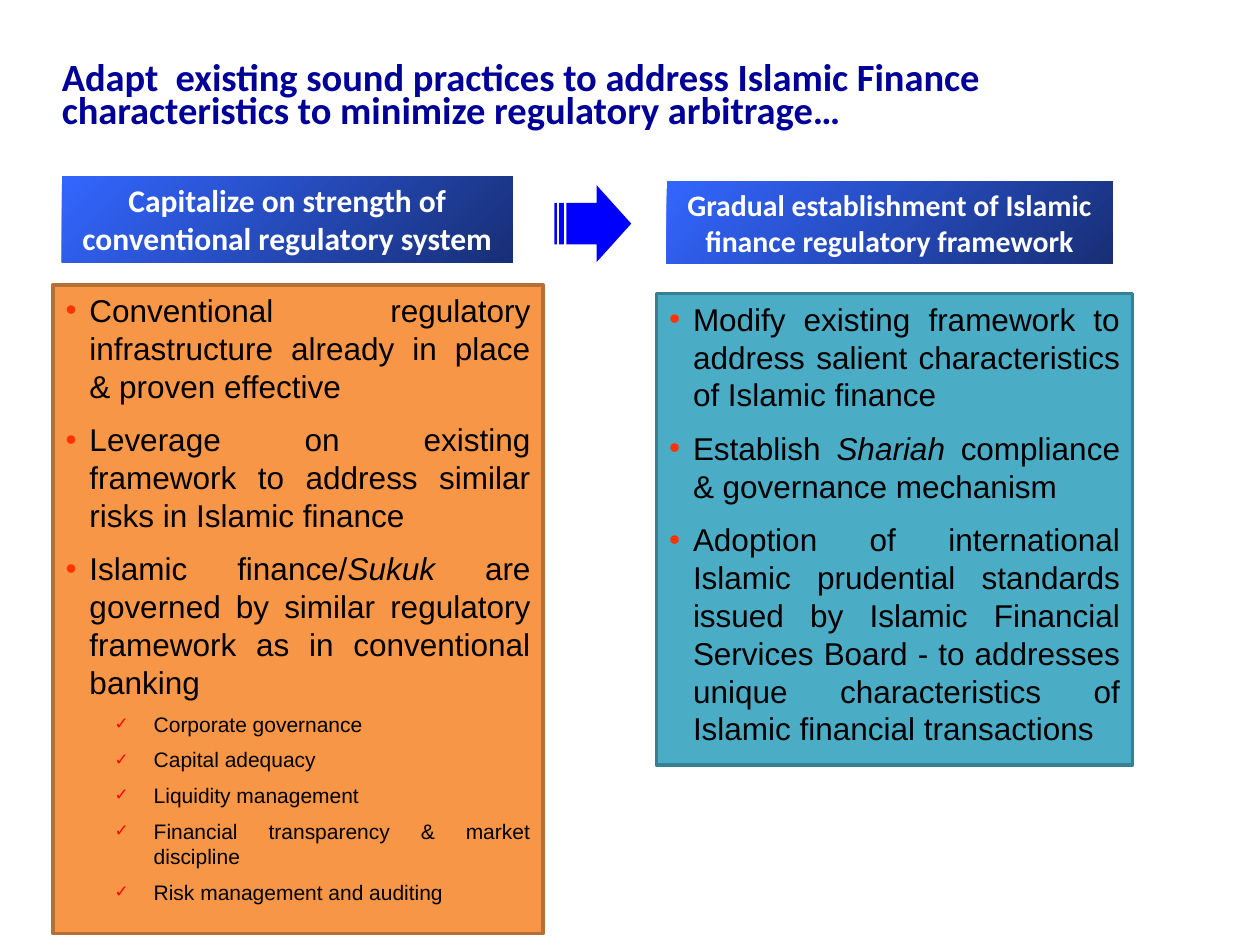
import dataclasses

import lxml.etree
import pptx
import pptx.dml.color
import pptx.enum.shapes
import pptx.enum.text
import pptx.oxml.ns
import pptx.util

Inches = pptx.util.Inches
Pt = pptx.util.Pt
SHAPE = pptx.enum.shapes.MSO_SHAPE
ALIGN = pptx.enum.text.PP_ALIGN
ANCHOR = pptx.enum.text.MSO_ANCHOR


@dataclasses.dataclass(frozen=True)
class Theme:
    heading_font: str = "Calibri"
    body_font: str = "Arial"
    title: str = "000099"
    text: str = "000000"
    header_text: str = "FFFFFF"
    header_start: str = "3366FF"
    header_end: str = "182F76"
    arrow: str = "0000FF"
    orange: str = "F79646"
    orange_line: str = "B76F34"
    teal: str = "4BACC6"
    teal_line: str = "377F92"
    bullet: str = "FF3300"
    check: str = "FF0000"
    title_size: int = 22
    body_size: int = 18
    sub_size: int = 12


def rgb(value):
    return pptx.dml.color.RGBColor.from_string(value)


def write(p, text, *, font, size, color, bold=False, align=ALIGN.JUSTIFY):
    """Add text to a paragraph; parts between asterisks are italic."""
    p.alignment = align
    for i, part in enumerate(text.split("*")):
        if part:
            r = p.add_run()
            r.text = part
            r.font.name = font
            r.font.size = Pt(size)
            r.font.color.rgb = rgb(color)
            r.font.bold = bold
            r.font.italic = i % 2 == 1


def set_bullet(p, char, color, left, hanging, percent):
    pPr = p._p.get_or_add_pPr()
    pPr.set("marL", str(Inches(left)))
    pPr.set("indent", str(-Inches(hanging)))

    def add(parent, tag, **attrs):
        return lxml.etree.SubElement(parent, pptx.oxml.ns.qn(tag), attrs)

    add(add(pPr, "a:buClr"), "a:srgbClr", val=color)
    add(pPr, "a:buSzPct", val=str(percent * 1000))
    add(pPr, "a:buChar", char=char)


def place(sp, left, top, width, height):
    sp.left, sp.top = Inches(left), Inches(top)
    sp.width, sp.height = Inches(width), Inches(height)


class SlideBuilder:
    def __init__(self, slide, theme):
        self.slide = slide
        self.theme = theme

    def paragraphs(self, tf, count):
        return [tf.paragraphs[0]] + [tf.add_paragraph() for _ in range(count - 1)]

    def frame(self, sp, anchor):
        tf = sp.text_frame
        tf.word_wrap = True
        tf.auto_size = pptx.enum.text.MSO_AUTO_SIZE.NONE
        tf.vertical_anchor = anchor
        return tf

    def title(self, lines, box):
        t = self.theme
        sp = self.slide.shapes.title
        place(sp, *box)
        tf = self.frame(sp, ANCHOR.TOP)
        for p, line in zip(self.paragraphs(tf, len(lines)), lines):
            write(p, line, font=t.heading_font, size=t.title_size,
                  color=t.title, bold=True)
            p.line_spacing = Pt(19)
            p.space_before = Pt(0)

    def header(self, text, box, size):
        t = self.theme
        sp = self.slide.shapes.add_shape(SHAPE.RECTANGLE, *map(Inches, box))
        sp.shadow.inherit = False
        sp.line.fill.background()
        sp.fill.gradient()
        sp.fill.gradient_angle = 315
        for stop, color, position in zip(sp.fill.gradient_stops,
                                         (t.header_start, t.header_end), (0, 1)):
            stop.color.rgb = rgb(color)
            stop.position = position
        tf = self.frame(sp, ANCHOR.MIDDLE)
        write(tf.paragraphs[0], text, font=t.heading_font, size=size,
              color=t.header_text, bold=True, align=ALIGN.CENTER)

    def bullet_panel(self, index, box, fill, line, points, checks=()):
        t = self.theme
        sp = self.slide.placeholders[index]
        place(sp, *box)
        sp.fill.solid()
        sp.fill.fore_color.rgb = rgb(fill)
        sp.line.color.rgb = rgb(line)
        sp.line.width = Pt(2)
        tf = self.frame(sp, ANCHOR.TOP)
        items = [(0, text) for text in points] + [(1, text) for text in checks]
        for i, (p, (level, text)) in enumerate(
                zip(self.paragraphs(tf, len(items)), items)):
            size = t.sub_size if level else t.body_size
            p.level = level
            p.line_spacing = Pt(size * 1.2)
            p.space_before = Pt(size / 2 if i else 0)
            write(p, text, font=t.body_font, size=size, color=t.text)
            if level:
                set_bullet(p, "✓", t.check, 0.7, 0.31, 80)
            else:
                set_bullet(p, "•", t.bullet, 0.19, 0.19, 100)

    def striped_arrow(self, box):
        sp = self.slide.shapes.add_shape(SHAPE.STRIPED_RIGHT_ARROW,
                                         *map(Inches, box))
        sp.adjustments[0] = 0.54
        sp.adjustments[1] = 0.45
        sp.shadow.inherit = False
        sp.fill.solid()
        sp.fill.fore_color.rgb = rgb(self.theme.arrow)
        sp.line.fill.background()


def main():
    prs = pptx.Presentation()
    prs.slide_width, prs.slide_height = Inches(10), Inches(7.5)
    theme = Theme()
    s = SlideBuilder(prs.slides.add_slide(prs.slide_layouts[3]), theme)

    s.title(["Adapt  existing sound practices to address Islamic Finance",
             "characteristics to minimize regulatory arbitrage…"],
            (0.39, 0.47, 8.75, 0.72))
    s.header("Capitalize on strength of conventional regulatory system",
             (0.49, 1.4, 3.58, 0.68), 18)
    s.bullet_panel(
        1, (0.42, 2.26, 3.89, 5.15), theme.orange, theme.orange_line,
        ["Conventional regulatory infrastructure already in place & proven effective",
         "Leverage on existing framework to address similar risks in Islamic finance",
         "Islamic finance/*Sukuk *are governed by similar regulatory framework "
         "as in conventional banking"],
        ["Corporate governance", "Capital adequacy", "Liquidity management",
         "Financial transparency & market discipline",
         "Risk management and auditing"])
    s.header("Gradual establishment of Islamic finance regulatory framework",
             (5.29, 1.44, 3.54, 0.65), 17)
    s.bullet_panel(
        2, (5.21, 2.33, 3.78, 3.74), theme.teal, theme.teal_line,
        ["Modify existing framework to address salient characteristics of Islamic finance",
         "Establish *Shariah* compliance & governance mechanism",
         "Adoption of international Islamic prudential standards issued by Islamic "
         "Financial Services Board - to addresses unique characteristics of Islamic "
         "financial transactions"])
    s.striped_arrow((4.4, 1.47, 0.61, 0.61))
    prs.save("out.pptx")


if __name__ == "__main__":
    main()
